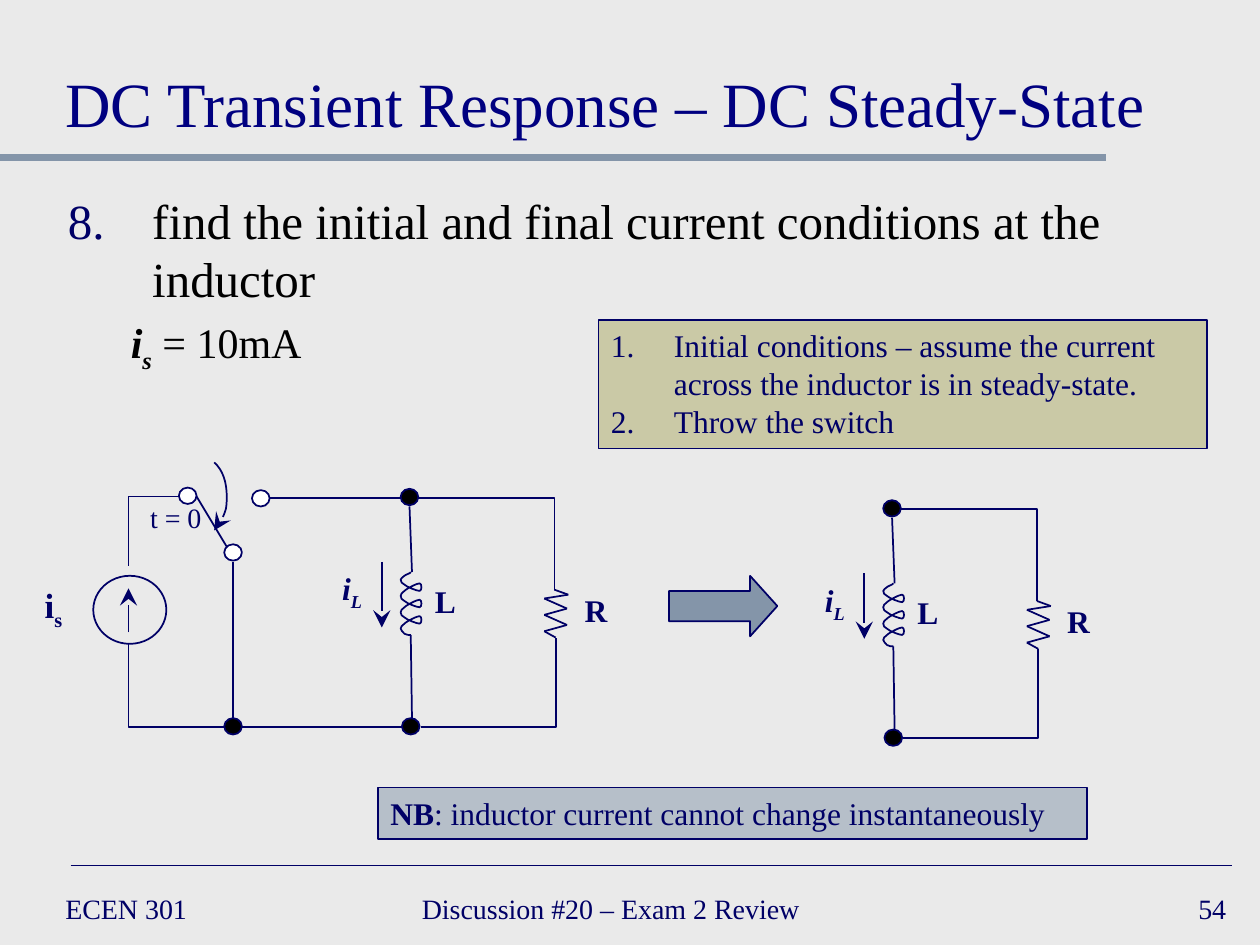
from dataclasses import dataclass
from typing import NamedTuple, Optional

import lxml.etree
import pptx
import pptx.dml.color
import pptx.enum.shapes
import pptx.enum.text
import pptx.oxml.ns
import pptx.util

Inches = pptx.util.Inches
Pt = pptx.util.Pt
qn = pptx.oxml.ns.qn
SHAPE = pptx.enum.shapes.MSO_SHAPE
CONNECTOR = pptx.enum.shapes.MSO_CONNECTOR
ALIGN = pptx.enum.text.PP_ALIGN
ANCHOR = pptx.enum.text.MSO_ANCHOR


@dataclass(frozen=True)
class Theme:
    font: str = "Times New Roman"
    back: str = "EAEAEA"
    navy: str = "000066"
    title: str = "000080"
    steel: str = "8495A9"
    olive: str = "ACA964"
    black: str = "000000"
    white: str = "FFFFFF"
    title_size: int = 36
    body_size: int = 28
    sub_size: int = 24
    source_size: int = 20
    label_size: int = 18
    small_size: int = 16


T = Theme()


class Run(NamedTuple):
    text: str
    bold: bool = False
    italic: bool = False
    sub: bool = False


class Para(NamedTuple):
    runs: list
    size: int
    color: str = T.navy
    align: Optional[int] = None
    margin: float = 0
    hang: float = 0
    before: float = 0
    number: int = 0  # first number of an automatic list, 0 for none


def rgb(value):
    return pptx.dml.color.RGBColor.from_string(value)


# Text
def write(shape, paras: list, *, anchor=ANCHOR.TOP, wrap=True) -> None:
    tf = shape.text_frame
    tf.word_wrap = wrap
    tf.vertical_anchor = anchor
    for i, para in enumerate(paras):
        p = tf.paragraphs[0] if i == 0 else tf.add_paragraph()
        p.alignment = para.align or ALIGN.LEFT
        pPr = p._p.get_or_add_pPr()
        pPr.set("marL", str(Inches(para.margin)))
        pPr.set("indent", str(-Inches(para.hang)))
        if para.before:
            p.space_before = Pt(para.before)
        if para.number:
            clr = lxml.etree.SubElement(pPr, qn("a:buClr"))
            lxml.etree.SubElement(clr, qn("a:srgbClr"), val=T.navy)
            lxml.etree.SubElement(pPr, qn("a:buAutoNum"), type="arabicPeriod",
                                  startAt=str(para.number))
        for run in para.runs:
            r = p.add_run()
            r.text = run.text
            r.font.name, r.font.size = T.font, Pt(para.size)
            r.font.bold, r.font.italic = run.bold, run.italic
            r.font.color.rgb = rgb(para.color)
            if run.sub:
                r.font._element.set("baseline", "-25000")


def text_box(s, x: float, y: float, w: float, h: float, paras: list, **fmt) -> None:
    write(s.shapes.add_textbox(Inches(x), Inches(y), Inches(w), Inches(h)), paras, **fmt)


def label(s, x: float, y: float, w: float, runs: list, size=T.label_size) -> None:
    text_box(s, x, y, w, 0.4, [Para(runs, size, align=ALIGN.CENTER)], wrap=False)


# Lines and shapes
def stroke(obj, color=T.navy, width=1.0, arrow=False) -> None:
    obj.line.color.rgb = rgb(color)
    obj.line.width = Pt(width)
    if arrow:
        ln = obj._element.spPr.find(qn("a:ln"))
        lxml.etree.SubElement(ln, qn("a:tailEnd"), type="stealth", w="lg", len="lg")


def line(s, start: tuple, end: tuple, *, bent=False, **look) -> None:
    """Draw a straight line, or a corner that leaves horizontally."""
    kind = CONNECTOR.ELBOW if bent else CONNECTOR.STRAIGHT
    c = s.shapes.add_connector(kind, *(Inches(v) for v in (*start, *end)))
    spPr = c._element.spPr
    if bent:
        spPr.find(qn("a:prstGeom")).set("prst", "bentConnector2")
    stroke(c, **look)
    lxml.etree.SubElement(spPr, qn("a:effectLst"))


def add_shape(s, kind, x, y, w, h, fill: Optional[str] = None, alpha=100):
    sp = s.shapes.add_shape(kind, Inches(x), Inches(y), Inches(w), Inches(h))
    sp.shadow.inherit = False
    if fill:
        sp.fill.solid()
        sp.fill.fore_color.rgb = rgb(fill)
        if alpha < 100:
            clr = sp._element.spPr.find(qn("a:solidFill"))[0]
            lxml.etree.SubElement(clr, qn("a:alpha"), val=str(alpha * 1000))
    else:
        sp.fill.background()
    stroke(sp)
    return sp


def node(s, x: float, y: float, fill=T.black) -> None:
    add_shape(s, SHAPE.OVAL, x, y, 0.14, 0.13, fill)


def curve(s, start: tuple, beziers: list, arrow=False) -> None:
    """Draw an open curve through cubic Bezier segments (control, control, end)."""
    fb = s.shapes.build_freeform(Inches(start[0]), Inches(start[1]))
    fb.add_line_segments([(Inches(x), Inches(y)) for *_, (x, y) in beziers], close=False)
    sp = fb.convert_to_shape()
    # Turn each straight segment into a cubic one
    for seg, points in zip(list(sp._element.iter(qn("a:lnTo"))), beziers):
        cubic = lxml.etree.Element(qn("a:cubicBezTo"))
        for x, y in points:
            lxml.etree.SubElement(cubic, qn("a:pt"), x=str(Inches(x) - sp.left),
                                  y=str(Inches(y) - sp.top))
        seg.getparent().replace(seg, cubic)
    sp.shadow.inherit = False
    sp.fill.background()
    stroke(sp, arrow=arrow)


# Circuit parts
TURN = [((0, 0.02), (0.01, 0.03), (0.03, 0.04)), ((0.05, 0.06), (0.13, 0.09), (0.15, 0.09)),
        ((0.17, 0.09), (0.17, 0.03), (0.15, 0.03)), ((0.13, 0.03), (0.05, 0.07), (0.03, 0.09)),
        ((0.01, 0.1), (0, 0.12), (0, 0.13))]
ZIGZAG = [(4.4, 4.68), (4.51, 4.72), (4.32, 4.75), (4.5, 4.83),
          (4.32, 4.88), (4.5, 4.96), (4.32, 5.01), (4.41, 5.06)]


def inductor_and_resistor(s, dx: float = 0, dy: float = 0) -> None:
    def at(x, y):
        return x + dx, y + dy

    line(s, at(3.25, 4.02), at(3.27, 4.54))
    line(s, at(3.27, 5.7), at(3.26, 5.04))
    line(s, at(3.32, 3.95), at(4.4, 4.68), bent=True)
    line(s, at(3.34, 5.77), at(4.41, 5.06), bent=True)
    node(s, *at(3.18, 3.88))
    node(s, *at(3.19, 5.7))
    coil = [(at(3.26, 4.55), at(3.22, 4.56), at(3.21, 4.57)),
            (at(3.2, 4.58), at(3.18, 4.59), at(3.18, 4.6))]
    for k in range(3):
        coil += [tuple(at(3.18 + x, 4.6 + 0.13 * k + y) for x, y in seg) for seg in TURN]
    coil += [(at(3.18, 5), at(3.2, 5.02), at(3.21, 5.03)),
             (at(3.22, 5.04), at(3.25, 5.04), at(3.26, 5.04))]
    curve(s, at(3.26, 4.54), coil)
    for a, b in zip(ZIGZAG, ZIGZAG[1:]):
        line(s, at(*a), at(*b))
    line(s, at(3.03, 4.46), at(3.03, 4.98), arrow=True)
    label(s, *at(2.61, 4.47), 0.37, [Run("i", True, True), Run("L", True, True, True)])
    label(s, *at(3.35, 4.57), 0.37, [Run("L", True)])
    label(s, *at(4.54, 4.64), 0.38, [Run("R", True)])


def source_and_switch(s) -> None:
    line(s, (1.78, 5.77), (1.02, 5.11), bent=True)
    line(s, (1.42, 3.94), (1.02, 4.49), bent=True)
    add_shape(s, SHAPE.OVAL, 0.74, 4.57, 0.58, 0.54)
    line(s, (1.02, 5.02), (1.02, 4.67), arrow=True)
    label(s, 0.25, 4.58, 0.35, [Run("i", True), Run("s", True, sub=True)], T.source_size)
    for start, end in [((3.18, 3.95), (2.14, 3.95)), ((1.92, 5.77), (3.19, 5.77)),
                       ((1.85, 5.7), (1.85, 4.46)), ((1.8, 4.34), (1.56, 3.94))]:
        line(s, start, end)
    for x, y in [(1.42, 3.87), (2, 3.89), (1.78, 4.32)]:
        node(s, x, y, T.white)
    node(s, 1.78, 5.7)
    curve(s, (1.7, 3.67), [((1.77, 3.73), (1.8, 3.83), (1.8, 3.94)),
                           ((1.8, 4.04), (1.77, 4.14), (1.7, 4.21))], arrow=True)
    label(s, 1.09, 3.92, 0.61, [Run("t = 0")], T.small_size)


def main() -> None:
    prs = pptx.Presentation()
    prs.slide_width, prs.slide_height = Inches(10), Inches(7.5)
    s = prs.slides.add_slide(prs.slide_layouts[6])
    s.background.fill.solid()
    s.background.fill.fore_color.rgb = rgb(T.back)

    # Rules, title and footer
    line(s, (0, 1.25), (8.78, 1.25), color=T.steel, width=4)
    line(s, (0.56, 6.87), (9.78, 6.87))
    text_box(s, 0.42, 0.16, 9.17, 1, [Para([Run("DC Transient Response – DC Steady-State")],
             T.title_size, T.title)], anchor=ANCHOR.BOTTOM)
    for x, w, text, align in [(0.42, 2.17, "ECEN 301", ALIGN.LEFT),
                              (3.25, 3.83, "Discussion #20 – Exam 2 Review", ALIGN.LEFT),
                              (7.75, 2.08, "54", ALIGN.RIGHT)]:
        text_box(s, x, 7, w, 0.42, [Para([Run(text)], T.small_size, align=align)],
                 anchor=ANCHOR.MIDDLE)

    # Problem statement
    text_box(s, 0.44, 1.46, 9.14, 1.54, [
        Para([Run("find the initial and final current conditions at the inductor")],
             T.body_size, T.black, margin=0.67, hang=0.67, number=8),
        Para([Run("i", True, True), Run("s", True, True, True), Run(" = 10mA")],
             T.sub_size, T.black, margin=1.08, hang=0.58, before=5)])

    # Circuit before and after the switch is thrown
    source_and_switch(s)
    inductor_and_resistor(s)
    inductor_and_resistor(s, 3.83, 0.09)
    arrow = add_shape(s, SHAPE.RIGHT_ARROW, 5.31, 4.57, 0.86, 0.48, T.steel)
    arrow.adjustments[1] = 0.45

    # Notes in boxes
    steps = ["Initial conditions – assume the current across the inductor is in steady-state.",
             "Throw the switch"]
    write(add_shape(s, SHAPE.RECTANGLE, 4.75, 2.54, 4.83, 1.02, T.olive, alpha=50),
          [Para([Run(t)], T.label_size, margin=0.5, hang=0.5, number=1) for t in steps])
    write(add_shape(s, SHAPE.RECTANGLE, 3, 6.25, 5.63, 0.41, T.steel, alpha=50),
          [Para([Run("NB", True), Run(": inductor current cannot change instantaneously")],
                T.label_size)])
    prs.save("out.pptx")


if __name__ == "__main__":
    main()
